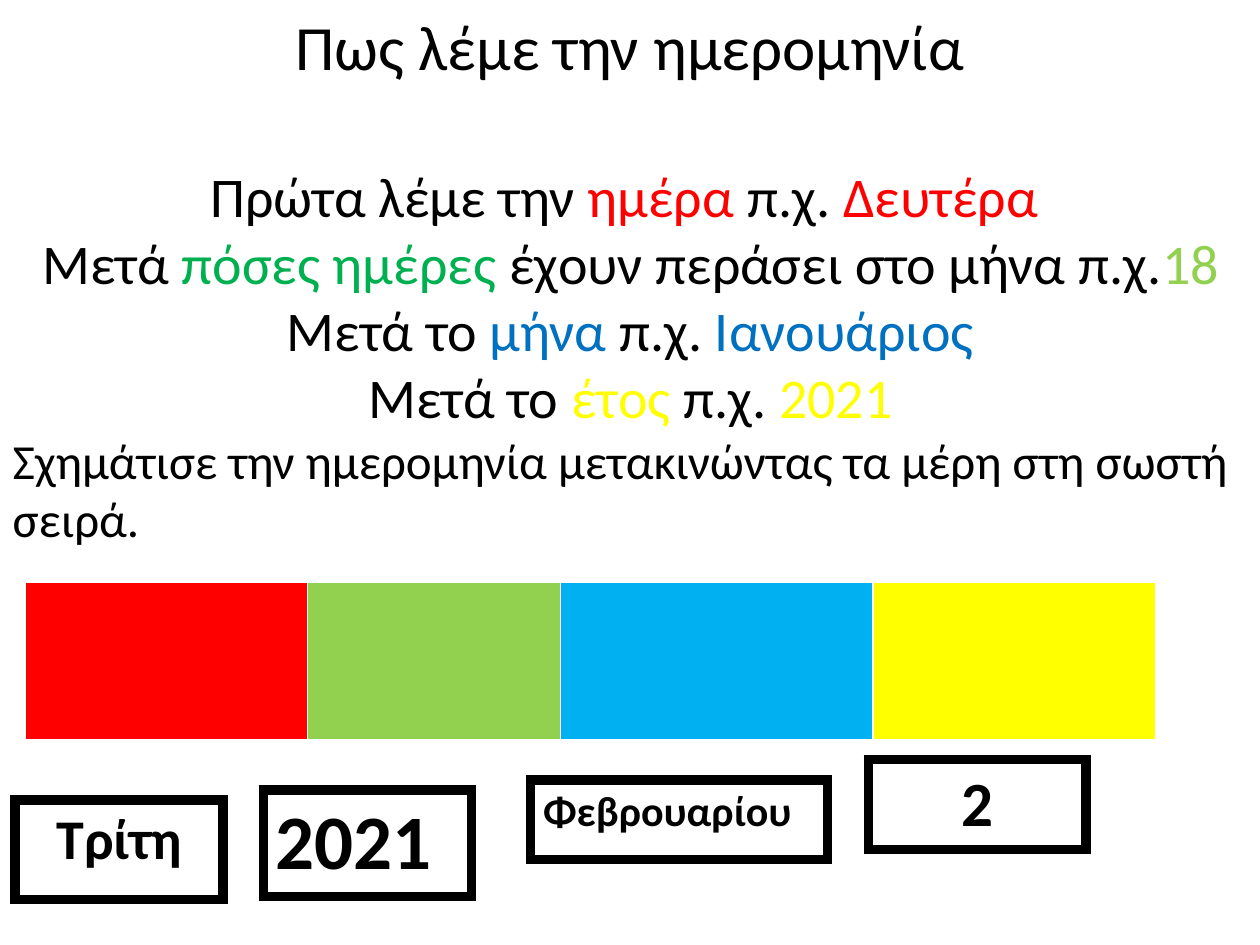
from lxml import etree
from pptx import Presentation
from pptx.dml.color import RGBColor
from pptx.enum.text import MSO_ANCHOR, MSO_AUTO_SIZE, PP_ALIGN
from pptx.oxml.ns import qn
from pptx.util import Inches, Pt

CENTER, LEFT = PP_ALIGN.CENTER, PP_ALIGN.LEFT
TOP = MSO_ANCHOR.TOP
NO_AUTOFIT = MSO_AUTO_SIZE.NONE

BLACK = RGBColor(0x00, 0x00, 0x00)
WHITE = RGBColor(0xFF, 0xFF, 0xFF)
RED = RGBColor(0xFF, 0x00, 0x00)
GREEN = RGBColor(0x00, 0xB0, 0x50)
LIGHT_GREEN = RGBColor(0x92, 0xD0, 0x50)
BLUE = RGBColor(0x00, 0x70, 0xC0)
SKY_BLUE = RGBColor(0x00, 0xB0, 0xF0)
YELLOW = RGBColor(0xFF, 0xFF, 0x00)

TITLE = "Πως λέμε την ημερομηνία"
RULES = [
    [("Πρώτα λέμε την ", BLACK), ("ημέρα ", RED), ("π.χ. ", BLACK), ("Δευτέρα ", RED)],
    [("Μετά ", BLACK), ("πόσες ημέρες ", GREEN),
     ("έχουν περάσει στο μήνα π.χ.", BLACK), ("18", LIGHT_GREEN)],
    [("Μετά το ", BLACK), ("μήνα ", BLUE), ("π.χ.", BLACK), (" Ιανουάριος", BLUE)],
    [("Μετά το ", BLACK), ("έτος ", YELLOW), ("π.χ.", BLACK), (" 2021", YELLOW)],
]
TASK = "Σχημάτισε την ημερομηνία μετακινώντας τα μέρη στη σωστή σειρά."
SLOTS = [(2.24, RED), (2.01, LIGHT_GREEN), (2.48, SKY_BLUE), (2.24, YELLOW)]
# text, left, top, width, height, font size, alignment
CARDS = [
    ("Τρίτη", 0.12, 6.35, 1.65, 0.79, 32, CENTER),
    ("2", 6.89, 6.03, 1.73, 0.71, 36, CENTER),
    ("Φεβρουαρίου", 4.21, 6.19, 2.36, 0.63, 24, LEFT),
    ("2021", 2.09, 6.27, 1.65, 0.83, 44, LEFT),
]


class SlideBuilder:
    def __init__(self, slide, font_name="Calibri"):
        self.slide = slide
        self.font_name = font_name

    def place(self, placeholder, left, top, width, height):
        placeholder.left, placeholder.top = Inches(left), Inches(top)
        placeholder.width, placeholder.height = Inches(width), Inches(height)
        frame = placeholder.text_frame
        frame.word_wrap = True
        frame.auto_size = NO_AUTOFIT
        frame.vertical_anchor = TOP
        return frame

    def fill_paragraph(self, paragraph, runs, size, alignment, bold=False):
        paragraph.alignment = alignment
        paragraph.font.name = self.font_name
        paragraph.font.size = Pt(size)
        paragraph.font.bold = bold
        for text, color in runs:
            run = paragraph.add_run()
            run.text = text
            run.font.color.rgb = color

    def title(self, text):
        frame = self.place(self.slide.shapes.title, 0, 0.01, 10, 0.75)
        self.fill_paragraph(frame.paragraphs[0], [(text, BLACK)], 36, CENTER)

    def body(self, lines):
        """Fill the body with (runs, size, alignment) lines without bullets."""
        frame = self.place(self.slide.placeholders[1], 0, 1.23, 10.01, 3.19)
        for index, (runs, size, alignment) in enumerate(lines):
            paragraph = frame.add_paragraph() if index else frame.paragraphs[0]
            self.fill_paragraph(paragraph, runs, size, alignment)
            paragraph.space_before = Pt(0)
            properties = paragraph._p.get_or_add_pPr()
            properties.set("marL", "0")
            properties.set("indent", "0")
            bullet = etree.Element(qn("a:buNone"))
            properties.find(qn("a:spcBef")).addnext(bullet)

    def table(self, left, top, widths, height):
        """Add a one-row table and return its cells."""
        table = self.slide.shapes.add_table(
            1, len(widths), Inches(left), Inches(top),
            Inches(sum(widths)), Inches(height)).table
        table.first_row = table.horz_banding = False
        for column, width in zip(table.columns, widths):
            column.width = Inches(width)
        return list(table.rows[0].cells)

    def borders(self, cell, color, width, bottom_width):
        properties = cell._tc.get_or_add_tcPr()
        sides = {"lnL": width, "lnR": width, "lnT": width, "lnB": bottom_width}
        for index, (side, points) in enumerate(sides.items()):
            line = etree.Element(qn(f"a:{side}"), w=str(Pt(points)))
            fill = etree.SubElement(line, qn("a:solidFill"))
            etree.SubElement(fill, qn("a:srgbClr"), val=str(color))
            properties.insert(index, line)

    def date_slots(self, left, top, height, slots):
        cells = self.table(left, top, [width for width, _ in slots], height)
        for cell, (_, color) in zip(cells, slots):
            cell.fill.solid()
            cell.fill.fore_color.rgb = color
            self.borders(cell, WHITE, 1, 3)

    def card(self, text, left, top, width, height, size, alignment):
        cell, = self.table(left, top, [width], height)
        cell.fill.background()
        self.borders(cell, BLACK, 6, 6)
        self.fill_paragraph(cell.text_frame.paragraphs[0], [(text, BLACK)],
                            size, alignment, bold=True)


def main():
    presentation = Presentation()
    presentation.slide_width = Inches(10)
    presentation.slide_height = Inches(7.5)
    slide = presentation.slides.add_slide(presentation.slide_layouts[1])
    builder = SlideBuilder(slide)
    builder.title(TITLE)
    builder.body([(runs, 32, CENTER) for runs in RULES]
                 + [([(TASK, BLACK)], 28, LEFT)])
    builder.date_slots(0.2, 4.62, 1.26, SLOTS)
    for card in CARDS:
        builder.card(*card)
    presentation.save("out.pptx")


if __name__ == "__main__":
    main()
